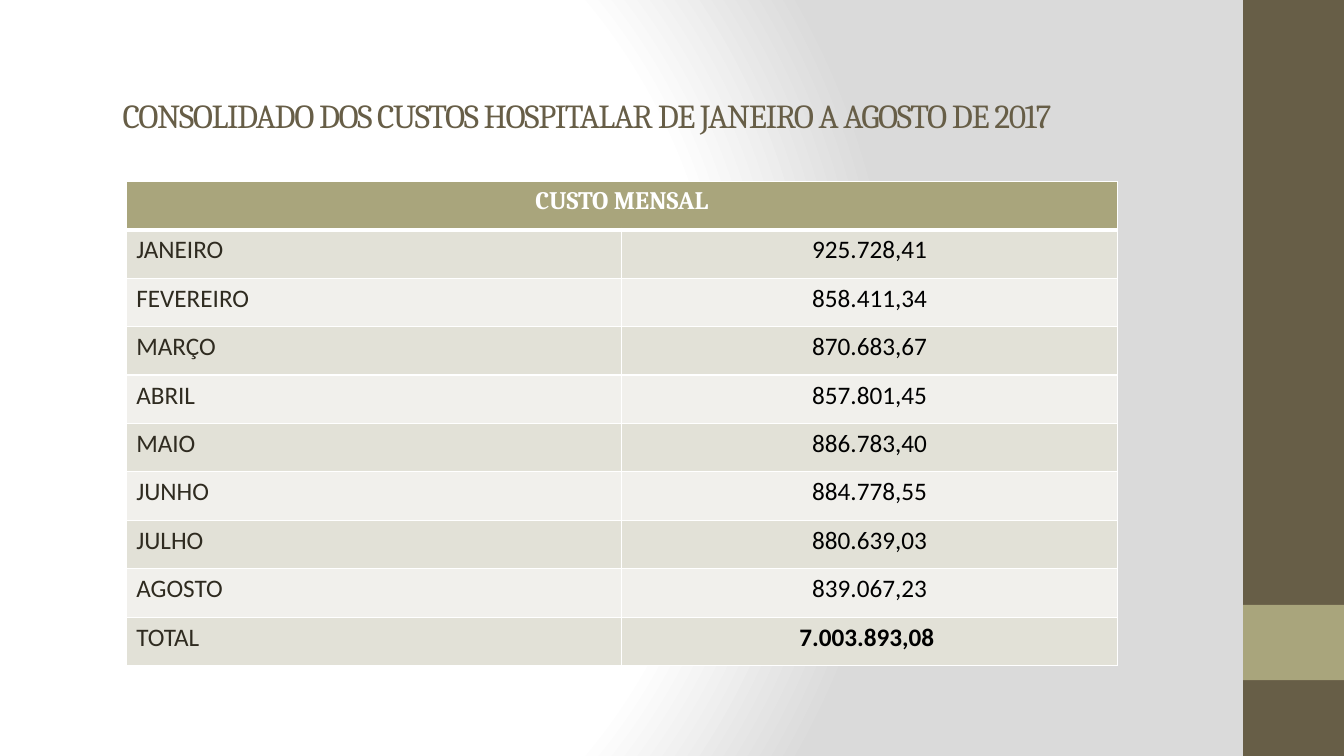
from dataclasses import dataclass

from lxml import etree
from pptx import Presentation
from pptx.dml.color import RGBColor
from pptx.enum.shapes import MSO_SHAPE
from pptx.enum.text import MSO_ANCHOR, PP_ALIGN
from pptx.oxml import parse_xml
from pptx.oxml.ns import qn
from pptx.util import Cm, Pt

RECTANGLE = MSO_SHAPE.RECTANGLE
MIDDLE = MSO_ANCHOR.MIDDLE
LEFT, CENTER = PP_ALIGN.LEFT, PP_ALIGN.CENTER
NAMESPACE = 'xmlns:a="http://schemas.openxmlformats.org/drawingml/2006/main"'


@dataclass(frozen=True)
class Theme:
    white: str = "FFFFFF"
    black: str = "000000"
    ink: str = "2F2B20"
    brown: str = "675E47"
    olive: str = "A9A57C"
    gray: str = "DADADA"
    bands: tuple = ("E2E1D7", "F1F0EC")
    heading_font: str = "Cambria"
    body_font: str = "Calibri"
    title_size: int = 24
    table_size: int = 18
    border: int = 1
    header_border: int = 3


TITLE = "CONSOLIDADO DOS CUSTOS HOSPITALAR DE JANEIRO A AGOSTO DE 2017"
HEADER = "CUSTO MENSAL"
MONTHLY_COSTS = [
    ("JANEIRO", "925.728,41"),
    ("FEVEREIRO", "858.411,34"),
    ("MARÇO", "870.683,67"),
    ("ABRIL", "857.801,45"),
    ("MAIO", "886.783,40"),
    ("JUNHO", "884.778,55"),
    ("JULHO", "880.639,03"),
    ("AGOSTO", "839.067,23"),
    ("TOTAL", "7.003.893,08 "),
]


class SlideBuilder:
    def __init__(self, slide, theme):
        self.slide = slide
        self.theme = theme

    def background(self):
        """Fill the background with a radial gradient centred left of the middle."""
        fill = self.slide.background.fill
        fill.gradient()
        gradient = next(self.slide.element.iter(qn("a:gradFill")))
        stops = ((0, self.theme.white), (75, self.theme.white), (100, self.theme.gray))
        stop_xml = "".join(
            f'<a:gs pos="{position * 1000}"><a:srgbClr val="{color}"/></a:gs>'
            for position, color in stops
        )
        radial = parse_xml(
            f'<a:gradFill {NAMESPACE} rotWithShape="1"><a:gsLst>{stop_xml}</a:gsLst>'
            '<a:path path="circle"><a:fillToRect l="20000" t="50000" r="100000" b="50000"/>'
            "</a:path></a:gradFill>"
        )
        gradient.getparent().replace(gradient, radial)

    def rectangle(self, left, top, width, height, color):
        shape = self.slide.shapes.add_shape(
            RECTANGLE, Cm(left), Cm(top), Cm(width), Cm(height)
        )
        shape.shadow.inherit = False
        shape.fill.solid()
        shape.fill.fore_color.rgb = RGBColor.from_string(color)
        shape.line.fill.background()

    def run(self, paragraph, text, size, font, color, bold=False):
        run = paragraph.add_run()
        run.text = text
        run.font.size = Pt(size)
        run.font.name = font
        run.font.bold = bold
        run.font.color.rgb = RGBColor.from_string(color)
        return run

    def title(self, left, top, width, height, text):
        box = self.slide.shapes.add_textbox(Cm(left), Cm(top), Cm(width), Cm(height))
        frame = box.text_frame
        frame.word_wrap = True
        frame.vertical_anchor = MIDDLE
        theme = self.theme
        run = self.run(
            frame.paragraphs[0], text, theme.title_size, theme.heading_font, theme.brown
        )
        run.font._element.set("spc", "-100")

    def cell(self, cell, fill, top_border, bottom_border):
        """Set the fill and the four borders of a table cell."""
        cell.fill.solid()
        cell.fill.fore_color.rgb = RGBColor.from_string(fill)
        properties = cell._tc.get_or_add_tcPr()
        side = self.theme.border
        widths = {"lnL": side, "lnR": side, "lnT": top_border, "lnB": bottom_border}
        for index, (tag, width) in enumerate(widths.items()):
            line = etree.Element(qn(f"a:{tag}"), w=str(Pt(width)))
            solid = etree.SubElement(line, qn("a:solidFill"))
            etree.SubElement(solid, qn("a:srgbClr"), val=self.theme.white)
            properties.insert(index, line)

    def cost_table(self, left, top, column_width, row_height, header, costs):
        theme = self.theme
        row_count = len(costs) + 1
        table = self.slide.shapes.add_table(
            row_count, 2, Cm(left), Cm(top),
            Cm(column_width * 2), Cm(row_height * row_count),
        ).table
        for column in table.columns:
            column.width = Cm(column_width)
        for row in table.rows:
            row.height = Cm(row_height)

        for cell in table.rows[0].cells:
            self.cell(cell, theme.olive, theme.border, theme.header_border)
        table.cell(0, 0).merge(table.cell(0, 1))
        paragraph = table.cell(0, 0).text_frame.paragraphs[0]
        paragraph.alignment = CENTER
        self.run(paragraph, header, theme.table_size, theme.heading_font, theme.white, True)

        styles = ((LEFT, theme.ink), (CENTER, theme.black))
        for row_index, values in enumerate(costs, start=1):
            fill = theme.bands[(row_index - 1) % 2]
            top_border = theme.header_border if row_index == 1 else theme.border
            is_total = row_index == len(costs)
            for column_index, (text, (alignment, color)) in enumerate(zip(values, styles)):
                cell = table.cell(row_index, column_index)
                self.cell(cell, fill, top_border, theme.border)
                paragraph = cell.text_frame.paragraphs[0]
                paragraph.alignment = alignment
                bold = is_total and column_index == 1
                self.run(paragraph, text, theme.table_size, theme.body_font, color, bold)


def main():
    presentation = Presentation()
    presentation.slide_width = Cm(33.87)
    presentation.slide_height = Cm(19.05)
    slide = presentation.slides.add_slide(presentation.slide_layouts[6])
    theme = Theme()
    builder = SlideBuilder(slide, theme)
    builder.background()
    builder.rectangle(31.33, 0, 2.54, 19.05, theme.brown)
    builder.rectangle(31.33, 15.24, 2.54, 1.9, theme.olive)
    builder.title(2.84, 1.88, 27.08, 2.03, TITLE)
    builder.cost_table(3.18, 4.57, 12.49, 1.22, HEADER, MONTHLY_COSTS)
    presentation.save("out.pptx")


if __name__ == "__main__":
    main()
